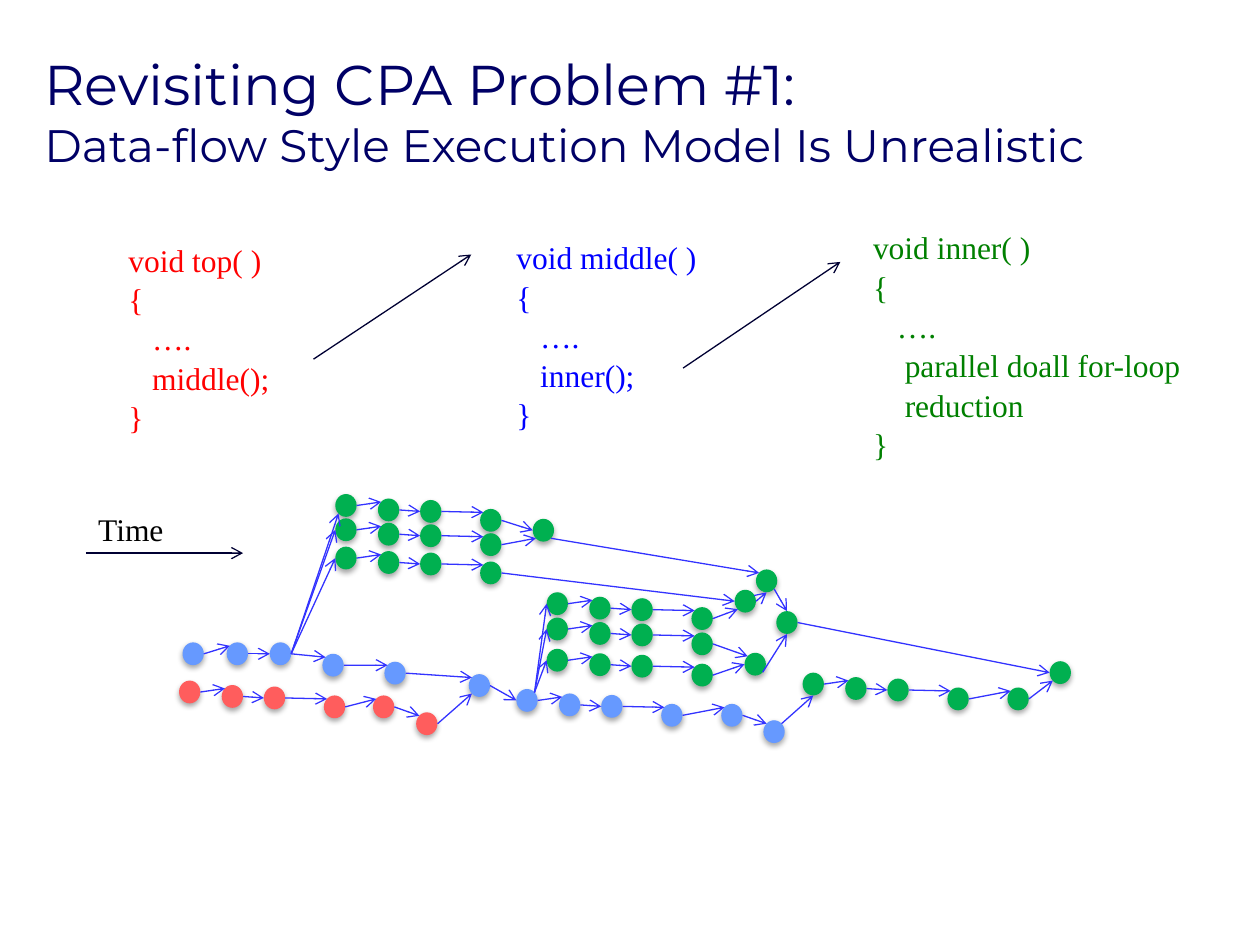
from lxml import etree
from pptx import Presentation
from pptx.dml.color import RGBColor
from pptx.enum.shapes import MSO_CONNECTOR, MSO_SHAPE
from pptx.enum.text import MSO_ANCHOR, MSO_AUTO_SIZE as AutoSize, PP_ALIGN
from pptx.oxml import parse_xml
from pptx.oxml.ns import nsdecls, qn
from pptx.util import Cm, Pt

# All lengths are centimetres.
TITLE = [("Revisiting CPA Problem #1:", 32),
         ("Data-flow Style Execution Model Is Unrealistic", 26)]

# left, top, width, height, colour, lines as (indent, text)
TEXTS = [
    (2.34, 4.7, 3.4, 4.11, "FF0000",
     [(0, "void top( )"), (0, "{"), (0.48, "…."), (0.48, "middle();"), (0, "}")]),
    (10.16, 4.65, 4.22, 4.11, "0000FF",
     [(0, "void middle( )"), (0, "{"), (0.48, "…."), (0.48, "inner();"), (0, "}")]),
    (17.35, 4.45, 6.81, 4.88, "008000",
     [(0, "void inner( )"), (0, "{"), (0.48, "…."),
      (0.64, "parallel doall for-loop"), (0.64, "reduction"), (0, "}")]),
    (1.73, 10.13, 1.85, 1.02, "000000", [(0, "Time")]),
]
CALL_ARROWS = [((6.32, 7.24), (9.5, 5.13)), ((13.77, 7.42), (16.94, 5.28))]
TIME_ARROW = ((1.73, 11.15), (4.9, 11.15))

RED, BLUE, GREEN = "FF5D5D", "6699FF", "00B050"
ARROW_BLUE, ARROW_DARK = "3333FF", "000033"
NODE_WIDTH, NODE_HEIGHT = 0.43, 0.46

# Every chain starts with the same four steps; some go on with a tail.
STEM = [(0, 0), (0.86, 0.09), (1.71, 0.12), (2.92, 0.3)]
# name: colour, left, top, offsets
CHAINS = {
    "top": (RED, 3.61, 13.72, STEM + [(3.91, 0.3), (4.78, 0.64)]),
    "middle": (BLUE, 3.68, 12.95, [(0, 0), (0.89, 0), (1.76, 0), (2.82, 0.23),
                                   (4.07, 0.39), (5.77, 0.64)]),
    "next": (BLUE, 10.41, 13.89, STEM + [(4.13, 0.3), (4.98, 0.63)]),
    "last": (GREEN, 16.18, 13.56, STEM + [(4.13, 0.3), (4.98, -0.23)]),
    "early 1": (GREEN, 6.76, 9.96, STEM),
    "early 2": (GREEN, 6.76, 10.45, STEM),
    "early 3": (GREEN, 6.76, 11.02, STEM),
    "late 1": (GREEN, 11.02, 11.94, STEM),
    "late 2": (GREEN, 11.02, 12.45, STEM),
    "late 3": (GREEN, 11.02, 13.08, STEM),
    "early sum": (GREEN, 10.74, 10.46, [(0, 0)]),
    "late sum": (GREEN, 15.01, 13.16, [(0, 0)]),
    "mixed sum": (GREEN, 14.81, 11.89, [(0, 0)]),
    "upper sum": (GREEN, 15.24, 11.48, [(0, 0)]),
    "total": (GREEN, 15.65, 12.32, [(0, 0)]),
}
# Points on a node's rim, as shares of its width and height
RIM = {"left": (0, 0.5), "right": (1, 0.5), "top": (0.5, 0), "bottom": (0.5, 1),
       "top left": (0.15, 0.15), "top right": (0.85, 0.15),
       "bottom left": (0.15, 0.85), "bottom right": (0.85, 0.85)}
# Arrows between chains: (chain, node, rim point) at each end
LINKS = [
    (("top", 5, "right"), ("middle", 5, "bottom left")),
    (("middle", 5, "right"), ("next", 0, "left")),
    (("next", 5, "top right"), ("last", 0, "bottom")),
    (("middle", 2, "right"), ("early 1", 0, "bottom left")),
    (("middle", 2, "right"), ("early 2", 0, "left")),
    (("middle", 2, "right"), ("early 3", 0, "left")),
    (("next", 0, "top right"), ("late 1", 0, "left")),
    (("next", 0, "top right"), ("late 2", 0, "left")),
    (("next", 0, "top right"), ("late 3", 0, "left")),
    (("early 1", 3, "right"), ("early sum", 0, "left")),
    (("early 2", 3, "right"), ("early sum", 0, "bottom left")),
    (("early 3", 3, "right"), ("mixed sum", 0, "left")),
    (("late 1", 3, "right"), ("mixed sum", 0, "bottom left")),
    (("late 2", 3, "right"), ("late sum", 0, "top left")),
    (("late 3", 3, "right"), ("late sum", 0, "left")),
    (("early sum", 0, "bottom right"), ("upper sum", 0, "top left")),
    (("mixed sum", 0, "right"), ("upper sum", 0, "bottom")),
    (("upper sum", 0, "bottom right"), ("total", 0, "top")),
    (("late sum", 0, "bottom right"), ("total", 0, "bottom")),
    (("total", 0, "right"), ("last", 5, "left")),
]
SHADOW = (f'<a:effectLst {nsdecls("a")}><a:outerShdw blurRad="40000" dist="23000" '
          'dir="5400000" rotWithShape="0"><a:srgbClr val="000000">'
          '<a:alpha val="35000"/></a:srgbClr></a:outerShdw></a:effectLst>')


def style(span, size, font, colour):
    span.font.size = Pt(size)
    span.font.name = font
    span.font.color.rgb = RGBColor.from_string(colour)


def add_title(page):
    title = page.shapes.title
    title.left, title.top, title.width, title.height = map(Cm, (0.64, 0.64, 24.77, 3.18))
    frame = title.text_frame
    frame.auto_size = AutoSize.NONE
    frame.vertical_anchor = MSO_ANCHOR.MIDDLE
    frame.text = "\v".join(text for text, _ in TITLE)
    para = frame.paragraphs[0]
    para.alignment = PP_ALIGN.LEFT
    for span, (_, size) in zip(para.runs, TITLE):
        style(span, size, "Montserrat", "000066")


def add_text(page, left, top, width, height, colour, lines):
    box = page.shapes.add_textbox(*map(Cm, (left, top, width, height)))
    frame = box.text_frame
    frame.word_wrap = False
    frame.auto_size = AutoSize.SHAPE_TO_FIT_TEXT
    frame.text = "\n".join(text for _, text in lines)
    for para, (indent, _) in zip(frame.paragraphs, lines):
        para.line_spacing = 1.04
        if indent:
            para._p.get_or_add_pPr().set("marL", str(Cm(indent)))
        style(para.runs[0], 18, "Times New Roman", colour)


def add_arrow(shapes, start, end, colour):
    arrow = shapes.add_connector(MSO_CONNECTOR.STRAIGHT, *map(Cm, start + end))
    arrow.line.color.rgb = RGBColor.from_string(colour)
    arrow.line.width = Pt(0.75)
    properties = arrow._element.spPr
    etree.SubElement(properties.find(qn("a:ln")), qn("a:tailEnd"), type="arrow")
    etree.SubElement(properties, qn("a:effectLst"))


def add_node(shapes, left, top, colour):
    node = shapes.add_shape(MSO_SHAPE.OVAL, *map(Cm, (left, top, NODE_WIDTH, NODE_HEIGHT)))
    node.fill.solid()
    node.fill.fore_color.rgb = RGBColor.from_string(colour)
    node.line.fill.background()
    node._element.spPr.append(parse_xml(SHADOW))


def rim_point(chain, index, side):
    _, left, top, offsets = CHAINS[chain]
    (dx, dy), (across, down) = offsets[index], RIM[side]
    return left + dx + across * NODE_WIDTH, top + dy + down * NODE_HEIGHT


def chain_links(chain):
    """Arrows from each node of a chain to the one after it."""
    for index in range(1, len(CHAINS[chain][3])):
        side = "left" if index == 2 else "top left"
        if (chain, index) == ("last", 5):
            side = "bottom left"
        yield (chain, index - 1, "right"), (chain, index, side)


def add_graph(page):
    shapes = page.shapes.add_group_shape().shapes
    for colour, left, top, offsets in CHAINS.values():
        for dx, dy in offsets:
            add_node(shapes, left + dx, top + dy, colour)
    inner_links = [link for chain in CHAINS for link in chain_links(chain)]
    for start, end in inner_links + LINKS:
        add_arrow(shapes, rim_point(*start), rim_point(*end), ARROW_BLUE)


def main():
    deck = Presentation()
    deck.slide_width, deck.slide_height = Cm(25.4), Cm(19.05)
    page = deck.slides.add_slide(deck.slide_layouts[5])
    add_title(page)
    for text in TEXTS:
        add_text(page, *text)
    add_graph(page)
    for start, end in CALL_ARROWS + [TIME_ARROW]:
        add_arrow(page.shapes, start, end, ARROW_DARK)
    deck.save("out.pptx")


if __name__ == "__main__":
    main()
